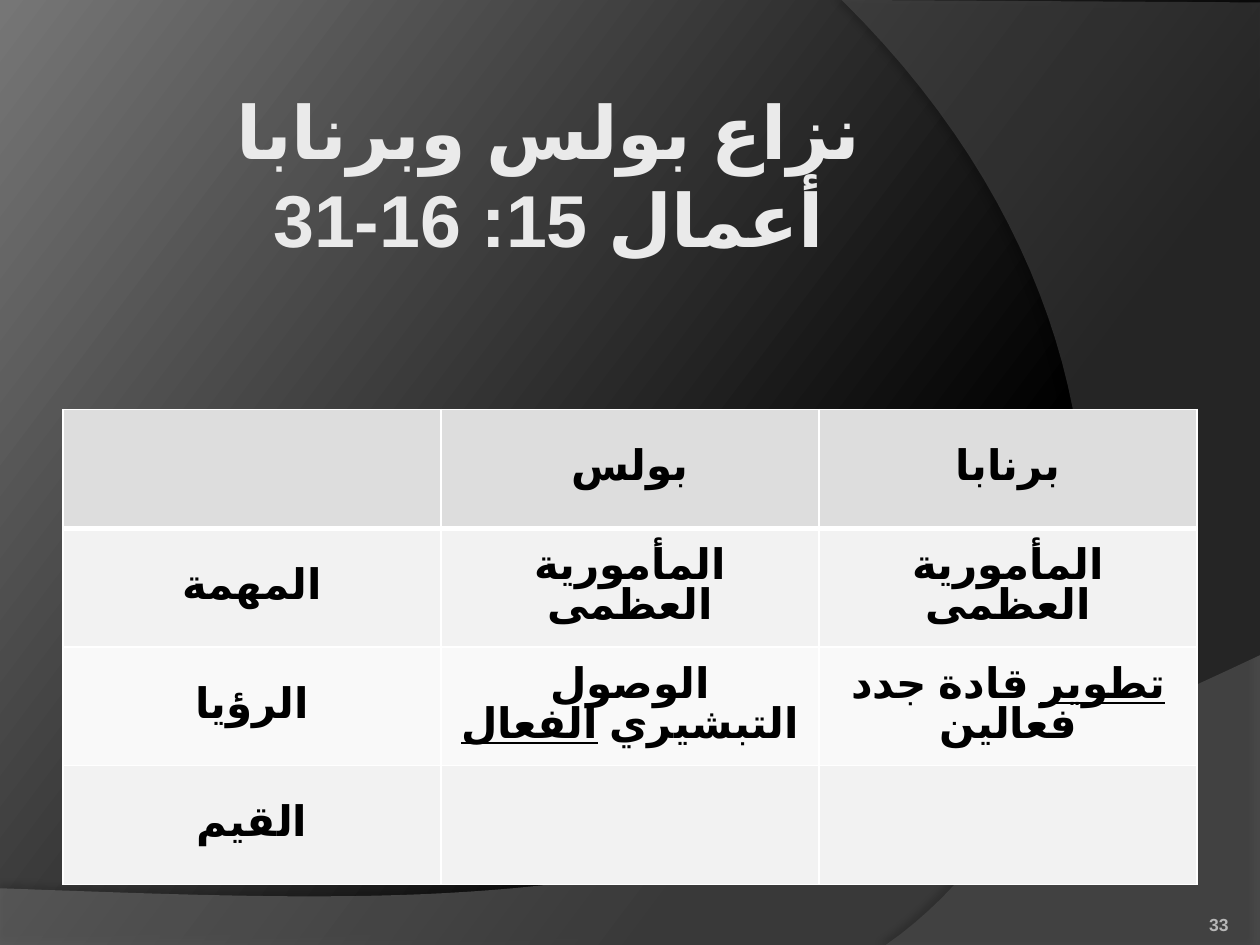
"""Build a slide that sets Paul and Barnabas side by side in a table."""
from dataclasses import dataclass
from typing import NamedTuple

from lxml import etree
from pptx import Presentation
from pptx import util as u
from pptx.dml.color import RGBColor
from pptx.enum import lang, text
from pptx.oxml.ns import qn

COLUMNS, ROWS = 40, 30
CURVE_STEPS = 48


@dataclass(frozen=True)
class Theme:
    font: str = "Arial"
    title_size: float = 42
    cell_size: float = 24
    number_size: float = 10
    title: str = "EAEAEA"
    number: str = "B7B7B7"
    ink: str = "000000"
    rule: str = "FFFFFF"
    header: str = "DDDDDD"
    bands: tuple = ("F2F2F2", "F9F9F9")
    backdrop: tuple = ((0.3, "000000"), (1, "767676"))
    backdrop_angle: float = 143


class Point(NamedTuple):
    x: float
    y: float


class Area(NamedTuple):
    column: float
    row: float
    columns: float
    rows: float


class Span(NamedTuple):
    words: str
    underline: bool = False


@dataclass(frozen=True)
class Sweep:
    corners: tuple
    curve: tuple
    color: str
    opacity: int
    shadow_opacity: int
    shadow_distance: float
    shadow_angle: int


THEME = Theme()
SWEEPS = (
    Sweep((Point(0, 28.2), Point(0, 30.04), Point(40, 30.04)),
          (Point(40, 20.8), Point(22.36, 29.16), Point(15.64, 28.76), Point(0, 28.2)),
          "7F7F7F", 45, 35, 3.5, 270),
    Sweep((Point(40, 0.08), Point(40, 30)),
          (Point(28.12, 30), Point(35.64, 24.76), Point(37.88, 11), Point(26.72, 0)),
          "5E5E5E", 40, 45, 4, 180),
)
TITLE_AREA = Area(2.92, 2.72, 29, 8)
NUMBER_AREA = Area(35.68, 28.08, 3.32, 1.6)
TABLE_AREA = Area(2, 13, 36, 15.08)
COMPARISON = (
    ((), (Span("بولس"),), (Span("برنابا"),)),
    ((Span("المهمة"),), (Span("المأمورية العظمى"),), (Span("المأمورية العظمى"),)),
    ((Span("الرؤيا"),),
     (Span("الوصول التبشيري "), Span("الفعال", True)),
     (Span("تطوير", True), Span(" قادة جدد فعالين"))),
    ((Span("القيم"),), (), ()),
)


def grid(units: float) -> int:
    """Turn grid units into a length; columns and rows share one square module."""
    return u.Inches(10 / COLUMNS * units)


def place(area: Area) -> tuple:
    """Give left, top, width and height of an area."""
    return tuple(grid(units) for units in area)


def add_element(parent, tag: str, **attributes):
    """Append a DrawingML element with the given attributes."""
    child = etree.SubElement(parent, qn(tag))
    for key, value in attributes.items():
        child.set(key, str(value))
    return child


def write(frame, *spans: Span, size: float, color: str,
          align=text.PP_ALIGN.CENTER, arabic: bool = True, spacing: float = 1) -> None:
    """Write spans as one bold paragraph."""
    paragraph = frame.paragraphs[0]
    paragraph.alignment = align
    paragraph.line_spacing = spacing
    if arabic:
        paragraph._p.get_or_add_pPr().set("rtl", "1")
    for span in spans:
        for index, line in enumerate(span.words.split("\n")):
            if index:
                paragraph.add_line_break()
            run = paragraph.add_run()
            run.text = line
            run.font.name, run.font.size, run.font.bold = THEME.font, u.Pt(size), True
            run.font.underline = span.underline
            run.font.color.rgb = RGBColor.from_string(color)
            if arabic:
                run.font.language_id = lang.MSO_LANGUAGE_ID.ARABIC
            add_element(run.font._element, "a:cs", typeface=THEME.font)


def add_label(slide, area: Area, words: str, anchor, inset: float = 0, **style) -> None:
    """Add a wrapped text box."""
    frame = slide.shapes.add_textbox(*place(area)).text_frame
    frame.word_wrap = True
    frame.vertical_anchor = anchor
    frame.margin_left = frame.margin_right = grid(inset)
    frame.margin_top = frame.margin_bottom = 0
    write(frame, Span(words), **style)


def bezier(curve: tuple, t: float) -> Point:
    """Find a point on a cubic curve."""
    weights = ((1 - t) ** 3, 3 * t * (1 - t) ** 2, 3 * t * t * (1 - t), t ** 3)
    return Point(sum(w * p.x for w, p in zip(weights, curve)),
                 sum(w * p.y for w, p in zip(weights, curve)))


def add_sweep(slide, sweep: Sweep) -> None:
    """Draw a translucent curved panel with a soft shadow."""
    arc = [bezier(sweep.curve, step / CURVE_STEPS) for step in range(CURVE_STEPS + 1)]
    start, *rest = [(grid(p.x), grid(p.y)) for p in (*sweep.corners, *arc)]
    builder = slide.shapes.build_freeform(*start)
    builder.add_line_segments(rest, close=True)
    panel = builder.convert_to_shape()
    panel.line.fill.background()
    panel.fill.solid()
    panel.fill.fore_color.rgb = RGBColor.from_string(sweep.color)
    panel.shadow.inherit = False
    properties = panel._element.spPr
    add_element(properties.find(qn("a:solidFill"))[0], "a:alpha", val=sweep.opacity * 1000)
    shadow = add_element(properties.find(qn("a:effectLst")), "a:outerShdw",
                         blurRad=u.Pt(4), dist=u.Pt(sweep.shadow_distance),
                         dir=sweep.shadow_angle * 60000, rotWithShape=0)
    tint = add_element(shadow, "a:srgbClr", val=THEME.ink)
    add_element(tint, "a:alpha", val=sweep.shadow_opacity * 1000)


def rule_cell(cell, **widths: float) -> None:
    """Draw the rules on the four sides of a cell."""
    properties = cell._tc.get_or_add_tcPr()
    for side in "LRTB":
        rule = add_element(properties, "a:ln" + side, w=u.Pt(widths.get(side, 1)))
        add_element(add_element(rule, "a:solidFill"), "a:srgbClr", val=THEME.rule)


def add_comparison(slide) -> None:
    """Add the comparison table."""
    table = slide.shapes.add_table(len(COMPARISON), len(COMPARISON[0]), *place(TABLE_AREA)).table
    table.first_row = table.horz_banding = False
    for r, row in enumerate(COMPARISON):
        shade = THEME.bands[(r - 1) % 2] if r else THEME.header
        for c, spans in enumerate(row):
            cell = table.cell(r, c)
            rule_cell(cell, T=3 if r == 1 else 1, B=1 if r else 3)
            cell.fill.solid()
            cell.fill.fore_color.rgb = RGBColor.from_string(shade)
            cell.vertical_anchor = text.MSO_ANCHOR.MIDDLE
            write(cell.text_frame, *spans, size=THEME.cell_size, color=THEME.ink, spacing=0.85)


def main() -> None:
    """Assemble and save the slide."""
    deck = Presentation()
    deck.slide_width, deck.slide_height = grid(COLUMNS), grid(ROWS)
    slide = deck.slides.add_slide(deck.slide_layouts[6])
    backdrop = slide.background.fill
    backdrop.gradient()
    backdrop.gradient_angle = THEME.backdrop_angle
    for stop, (position, color) in zip(backdrop.gradient_stops, THEME.backdrop):
        stop.position = position
        stop.color.rgb = RGBColor.from_string(color)
    for sweep in SWEEPS:
        add_sweep(slide, sweep)
    add_label(slide, TITLE_AREA, "نزاع بولس وبرنابا\nأعمال 15: 16-31", text.MSO_ANCHOR.TOP,
              inset=0.2, size=THEME.title_size, color=THEME.title)
    add_label(slide, NUMBER_AREA, "33", text.MSO_ANCHOR.BOTTOM, size=THEME.number_size,
              color=THEME.number, align=text.PP_ALIGN.RIGHT, arabic=False)
    add_comparison(slide)
    deck.save("out.pptx")


if __name__ == "__main__":
    main()
